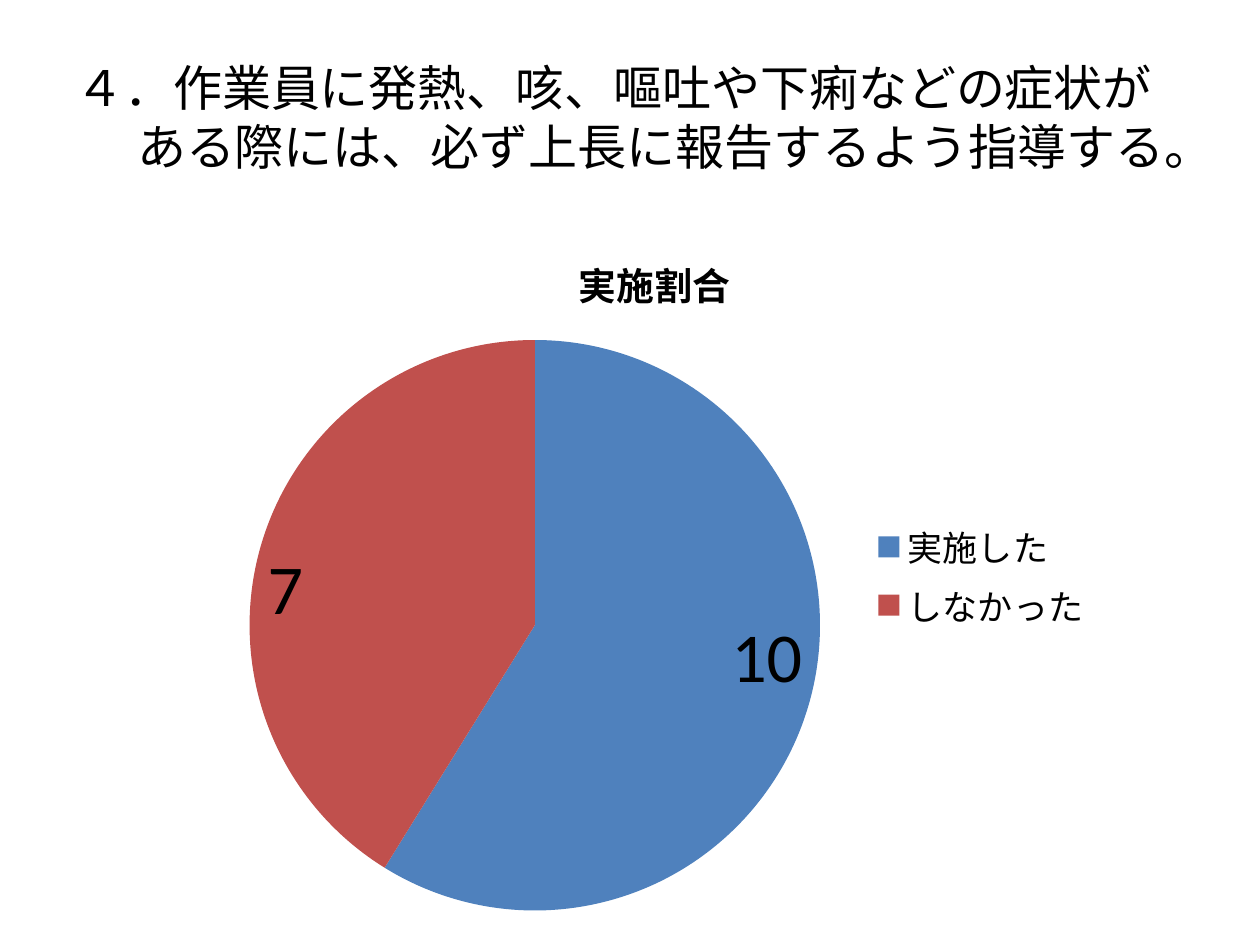
from pptx import Presentation
from pptx.chart.data import CategoryChartData
from pptx.dml.color import RGBColor
from pptx.enum.chart import XL_CHART_TYPE, XL_LABEL_POSITION, XL_LEGEND_POSITION
from pptx.enum.text import MSO_ANCHOR
from pptx.util import Inches, Pt

HEADING = "４．作業員に発熱、咳、嘔吐や下痢などの症状がある際には、必ず上長に報告するよう指導する。"
CHART_TITLE = "実施割合"
ANSWERS = [("実施した", 10, "4F81BD"), ("しなかった", 7, "C0504D")]

WIDTH, HEIGHT = Inches(10), Inches(7.5)
HEADING_AREA = (0.05, 0.04, 0.9, 0.167)  # shares of the slide
CHART_AREA = (0.161, 0.237, 0.717, 0.745)
HANGING = Inches(0.49)


def color(value):
    return RGBColor.from_string(value)


def place(area):
    """Turn shares of the slide into left, top, width and height."""
    return [int(share * side) for share, side in zip(area, (WIDTH, HEIGHT) * 2)]


def style(font, size, bold=False):
    for name, value in {"name": "Calibri", "size": Pt(size), "bold": bold}.items():
        setattr(font, name, value)
    font.color.rgb = color("000000")


def add_heading(page):
    frame = page.shapes.add_textbox(*place(HEADING_AREA)).text_frame
    frame.word_wrap = True
    frame.vertical_anchor = MSO_ANCHOR.MIDDLE
    para = frame.paragraphs[0]
    indents = para._p.get_or_add_pPr()
    indents.set("marL", str(HANGING))
    indents.set("indent", str(-HANGING))
    span = para.add_run()
    span.text = HEADING
    style(span.font, 28)


def add_pie(page):
    names, counts, fills = zip(*ANSWERS)
    data = CategoryChartData()
    data.categories = names
    data.add_series(CHART_TITLE, counts)
    chart = page.shapes.add_chart(XL_CHART_TYPE.PIE, *place(CHART_AREA), data).chart
    style(chart.font, 18)

    chart.has_title = True
    chart.chart_title.include_in_layout = False
    para = chart.chart_title.text_frame.paragraphs[0]
    span = para.add_run()
    span.text = CHART_TITLE
    style(span.font, 21.6, bold=True)

    chart.has_legend = True
    chart.legend.position = XL_LEGEND_POSITION.RIGHT
    chart.legend.include_in_layout = False
    style(chart.legend.font, 20)

    plot = chart.plots[0]
    plot.vary_by_categories = True
    series = plot.series[0]
    for index, fill in enumerate(fills):
        slice_fill = series.points[index].format.fill
        slice_fill.solid()
        slice_fill.fore_color.rgb = color(fill)
    labels = series.data_labels
    labels.show_value = True
    labels.position = XL_LABEL_POSITION.INSIDE_END
    style(labels.font, 40)


def main():
    deck = Presentation()
    deck.slide_width, deck.slide_height = WIDTH, HEIGHT
    page = deck.slides.add_slide(deck.slide_layouts[6])
    add_heading(page)
    add_pie(page)
    deck.save("out.pptx")


if __name__ == "__main__":
    main()
